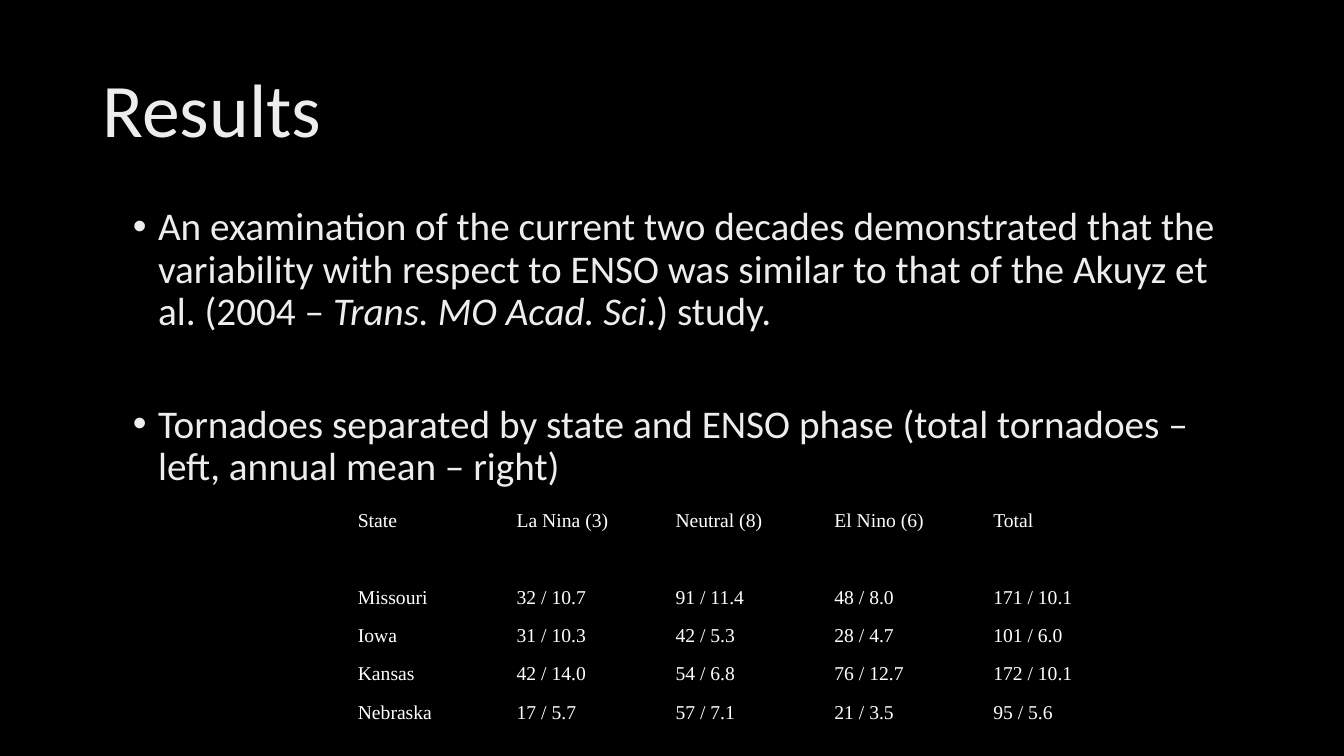
from dataclasses import dataclass

import pptx
import pptx.dml.color
import pptx.enum.text
import pptx.oxml
import pptx.oxml.ns
import pptx.util
from lxml import etree

WIDTH, HEIGHT = 13.33, 7.5
BLACK, LIGHT, WHITE = "000000", "EDEDED", "FFFFFF"


@dataclass
class Span:
    text: str
    italic: bool = False


@dataclass
class Area:
    """Place on the slide, as shares of its width and height."""
    left: float
    top: float
    width: float
    height: float

    def lengths(self) -> list:
        sides = ((self.left, WIDTH), (self.top, HEIGHT),
                 (self.width, WIDTH), (self.height, HEIGHT))
        return [pptx.util.Inches(share * side) for share, side in sides]


@dataclass
class TextBlock:
    area: Area
    paragraphs: list
    size: float
    anchor: pptx.enum.text.MSO_ANCHOR
    bulleted: bool = False
    gap: float = 0


BLOCKS = [
    TextBlock(Area(0.069, 0.053, 0.863, 0.193), [[Span("Results")]], 54,
              pptx.enum.text.MSO_ANCHOR.MIDDLE),
    TextBlock(Area(0.0915, 0.267, 0.8395, 0.635), [
        [Span("An examination of the current two decades demonstrated that the "
              "variability with respect to ENSO was similar to that of the "
              "Akuyz et al. (2004 – "),
         Span("Trans. MO Acad. Sci", italic=True),
         Span(".) study.")],
        [Span("Tornadoes separated by state and ENSO phase "
              "(total tornadoes – left, annual mean – right)")],
    ], 28, pptx.enum.text.MSO_ANCHOR.TOP, bulleted=True, gap=50.5),
]

TABLE_AREA = Area(0.261, 0.673, 0.591, 0.304)
TORNADOES = [
    ["State", "La Nina (3)", "Neutral (8)", "El Nino (6)", "Total"],
    [""] * 5,
    ["Missouri", "32 / 10.7", "91 / 11.4", "48 / 8.0", "171 / 10.1"],
    ["Iowa", "31 / 10.3", "42 / 5.3", "28 / 4.7", "101 / 6.0"],
    ["Kansas", "42 / 14.0", "54 / 6.8", "76 / 12.7", "172 / 10.1"],
    ["Nebraska", "17 / 5.7", "57 / 7.1", "21 / 3.5", "95 / 5.6"],
]


def color(value: str) -> pptx.dml.color.RGBColor:
    return pptx.dml.color.RGBColor.from_string(value)


def apply(target, values: dict) -> None:
    for name, value in values.items():
        setattr(target, name, value)


def format_font(font, name: str, size: float, shade: str, italic: bool = False) -> None:
    apply(font, {"name": name, "size": pptx.util.Pt(size), "italic": italic})
    font.fill.solid()
    font.fill.fore_color.rgb = color(shade)


def add_bullet(para) -> None:
    properties = para._p.get_or_add_pPr()
    indent = pptx.util.Inches(0.25)
    properties.set("marL", str(indent))
    properties.set("indent", str(-indent))
    for tag, attribute, value in (("a:buFont", "typeface", "Arial"),
                                  ("a:buChar", "char", "•")):
        etree.SubElement(properties, pptx.oxml.ns.qn(tag)).set(attribute, value)


def add_text(page, block: TextBlock) -> None:
    box = page.shapes.add_textbox(*block.area.lengths())
    frame = box.text_frame
    apply(frame, {"word_wrap": True, "vertical_anchor": block.anchor})
    for index, spans in enumerate(block.paragraphs):
        para = frame.add_paragraph() if index else frame.paragraphs[0]
        para.line_spacing = 0.9
        if index:
            para.space_before = pptx.util.Pt(block.gap)
        if block.bulleted:
            add_bullet(para)
        format_font(para.font, "Calibri", block.size, LIGHT)
        for span in spans:
            run = para.add_run()
            run.text = span.text
            format_font(run.font, "Calibri", block.size, LIGHT, span.italic)


def add_borders(cell, shade: str) -> None:
    properties = cell._tc.get_or_add_tcPr()
    for index, side in enumerate(("lnL", "lnR", "lnT", "lnB")):
        line = pptx.oxml.parse_xml(
            f'<a:{side} {pptx.oxml.ns.nsdecls("a")} w="{pptx.util.Pt(1)}">'
            f'<a:solidFill><a:srgbClr val="{shade}"/></a:solidFill></a:{side}>')
        properties.insert(index, line)


def add_table(page, area: Area, rows: list) -> None:
    left, top, width, height = area.lengths()
    table = page.shapes.add_table(len(rows), len(rows[0]), left, top, width, height).table
    apply(table, {"first_row": False, "horz_banding": False})
    margin = pptx.util.Inches(0.07)
    layout = {"margin_left": margin, "margin_right": margin,
              "margin_top": 0, "margin_bottom": 0}
    for row, texts in enumerate(rows):
        for column, text in enumerate(texts):
            cell = table.cell(row, column)
            apply(cell, layout)
            cell.fill.solid()
            cell.fill.fore_color.rgb = color(BLACK)
            add_borders(cell, BLACK)
            para = cell.text_frame.paragraphs[0]
            para.line_spacing = 1.07
            if text:
                run = para.add_run()
                run.text = text
                format_font(run.font, "Times New Roman", 14, WHITE)


def main() -> None:
    deck = pptx.Presentation()
    apply(deck, {"slide_width": pptx.util.Inches(WIDTH),
                 "slide_height": pptx.util.Inches(HEIGHT)})
    page = deck.slides.add_slide(deck.slide_layouts[6])

    # Background
    page.background.fill.solid()
    page.background.fill.fore_color.rgb = color(BLACK)

    # Title and bullets
    for block in BLOCKS:
        add_text(page, block)

    # Tornado counts by state and phase
    add_table(page, TABLE_AREA, TORNADOES)

    deck.save("out.pptx")


if __name__ == "__main__":
    main()
